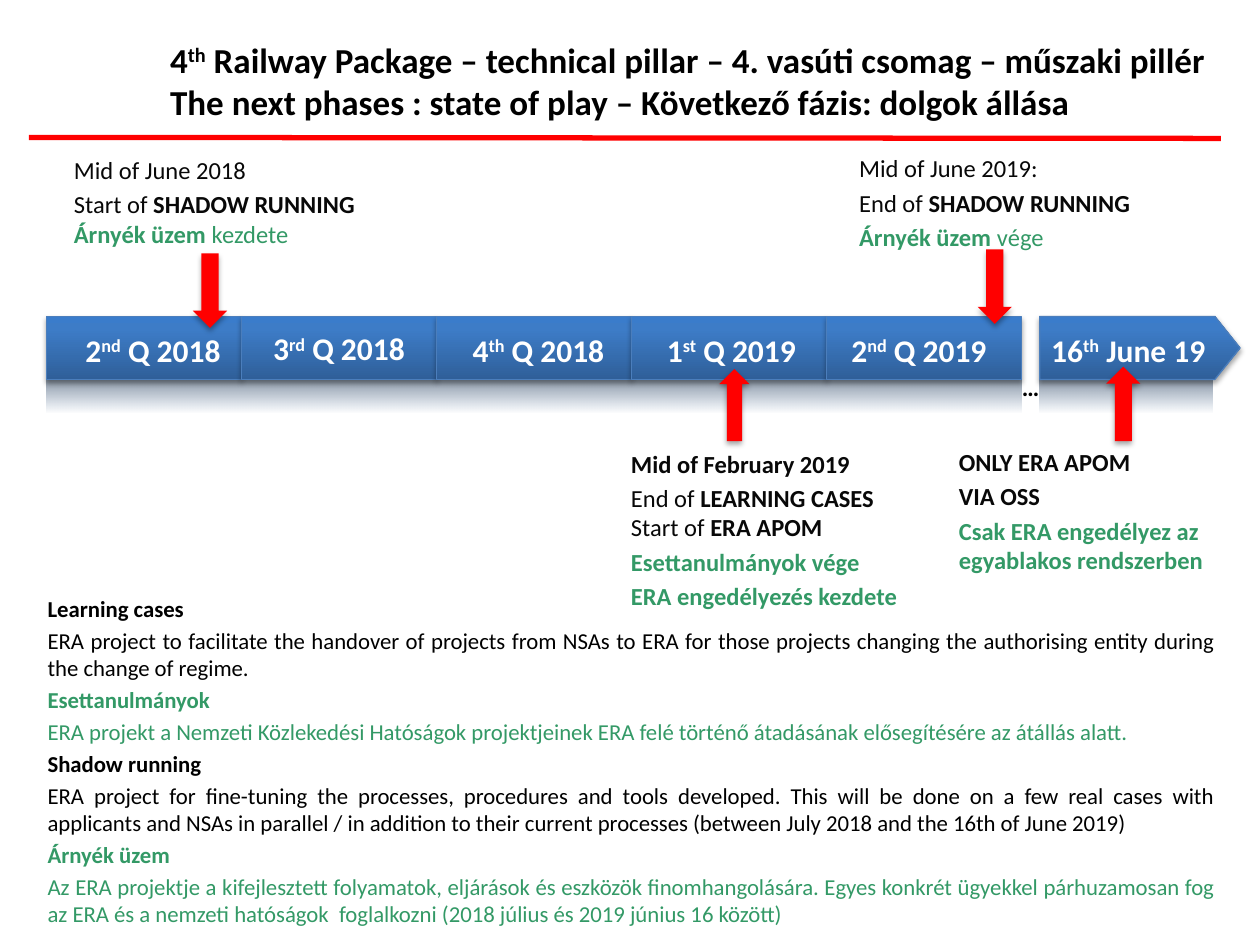
from lxml import etree
from pptx import Presentation
from pptx.dml.color import RGBColor
from pptx.enum.shapes import MSO_CONNECTOR, MSO_SHAPE
from pptx.enum.text import MSO_ANCHOR, MSO_AUTO_SIZE, PP_ALIGN
from pptx.oxml.ns import qn
from pptx.util import Cm, Pt

RECT, PENTAGON, ARROW = MSO_SHAPE.RECTANGLE, MSO_SHAPE.PENTAGON, MSO_SHAPE.DOWN_ARROW
LEFT, CENTER, JUSTIFY = PP_ALIGN.LEFT, PP_ALIGN.CENTER, PP_ALIGN.JUSTIFY
TOP, MIDDLE, BOTTOM = MSO_ANCHOR.TOP, MSO_ANCHOR.MIDDLE, MSO_ANCHOR.BOTTOM

FONT = "Calibri"
BLACK, INK, WHITE, GREEN, RED = "000000", "080808", "FFFFFF", "339966", "FF0000"
TILE_LINE = "4B7EBC"
# Gradient stops: position %, colour, opacity %
TILE_STOPS = [(0, "2F5F99", 100), (80, "3D7CC7", 100), (100, "3A7CCB", 100)]
REFLECTION_STOPS = [(0, "070D13", 100), (100, "1F497D", 0)]

# A run is (text, marks): b = bold, g = green, ^ = superscript
TITLE = [
    [("4", "b"), ("th", "b^"),
     (" Railway Package – technical pillar – 4. vasúti csomag – műszaki pillér", "b")],
    [("The next phases : state of play – Következő fázis: dolgok állása", "b")],
]

# number, ordinal, rest, left of the label (None: written in the tile itself)
QUARTERS = [
    ("2", "nd", " Q 2018", 1.12),
    ("3", "rd", " Q 2018", None),
    ("4", "th", " Q 2018", 8.89),
    ("1", "st", " Q 2019", 12.78),
    ("2", "nd", " Q 2019", 16.56),
]
DEADLINE = ("16", "th", " June 19", 20.78)

# callout box, arrow box, arrow rotation, paragraphs
MILESTONES = [
    ((1.24, 3.0, 6.45, 2.16), (3.89, 5.11, 0.69, 1.5), 0, [
        [("Mid of June 2018", "")],
        [("Start of ", ""), ("SHADOW RUNNING ", "b"), ("Árnyék üzem ", "bg"), ("kezdete", "g")],
    ]),
    ((17.07, 2.97, 7.39, 2.29), (19.71, 5.03, 0.69, 1.5), 0, [
        [("Mid of June 2019:", "")],
        [("End of ", ""), ("SHADOW RUNNING", "b")],
        [("Árnyék üzem ", "bg"), ("vége", "g")],
    ]),
    ((12.47, 8.92, 6.12, 3.61), (14.5, 7.44, 0.61, 1.45), 180, [
        [("Mid of February 2019", "b")],
        [("End of ", ""), ("LEARNING CASES", "b"), (" Start of ", ""), ("ERA APOM", "b")],
        [("Esettanulmányok vége", "bg")],
        [("ERA engedélyezés kezdete", "bg")],
    ]),
    ((19.08, 8.89, 6.12, 2.9), (22.3, 7.39, 0.69, 1.5), 180, [
        [("ONLY ERA APOM", "b")],
        [("VIA OSS", "b")],
        [("Csak ERA engedélyez az egyablakos rendszerben", "bg")],
    ]),
]

DEFINITIONS = [
    [("Learning cases", "b")],
    [("ERA project to facilitate the handover of projects from NSAs to ERA for those projects "
      "changing the authorising entity during the change of regime.", "")],
    [("Esettanulmányok", "bg")],
    [("ERA projekt a Nemzeti Közlekedési Hatóságok projektjeinek ERA felé történő átadásának "
      "elősegítésére az átállás alatt.", "g")],
    [("Shadow running", "b")],
    [("ERA project for fine-tuning the processes, procedures and tools developed. This will be "
      "done on a few real cases with applicants and NSAs in parallel / in addition to their "
      "current processes (between July 2018 and the 16th of June 2019)", "")],
    [("Árnyék üzem", "bg")],
    [("Az ERA projektje a kifejlesztett folyamatok, eljárások és eszközök finomhangolására. "
      "Egyes konkrét ügyekkel párhuzamosan fog az ERA és a nemzeti hatóságok  foglalkozni "
      "(2018 július és 2019 június 16 között)", "g")],
]

TILE_LEFT, TILE_TOP, TILE_WIDTH, TILE_HEIGHT = 0.94, 6.38, 3.93, 1.27
DEADLINE_LEFT, DEADLINE_WIDTH = 20.96, 4.04
REFLECTION_TOP, REFLECTION_HEIGHT = 6.99, 1.32
LABEL_TOP, LABEL_HEIGHT = 6.63, 0.84


def rgb(color):
    return RGBColor.from_string(color)


def add_xml(parent, tag, **attributes):
    return etree.SubElement(parent, qn(tag), {k: str(v) for k, v in attributes.items()})


def add_color(parent, color, opacity):
    add_xml(add_xml(parent, "a:srgbClr", val=color), "a:alpha", val=opacity * 1000)


def fill_gradient(shape, stops, angle):
    shape.fill.gradient()
    gradient = shape._element.spPr.find(qn("a:gradFill"))
    for child in list(gradient):
        gradient.remove(child)
    stop_list = add_xml(gradient, "a:gsLst")
    for position, color, opacity in stops:
        add_color(add_xml(stop_list, "a:gs", pos=position * 1000), color, opacity)
    add_xml(gradient, "a:lin", ang=angle * 60000, scaled=0)


def drop_shadow(shape):
    effects = shape._element.spPr.find(qn("a:effectLst"))
    shadow = add_xml(effects, "a:outerShdw", blurRad=Pt(3.1), dist=Pt(1.8),
                     dir=90 * 60000, rotWithShape=0)
    add_color(shadow, BLACK, 35)


def add_plain_shape(kind, box):
    shape = slide.shapes.add_shape(kind, *map(Cm, box))
    shape.shadow.inherit = False
    shape.line.fill.background()
    return shape


def add_tile(kind, left, width):
    tile = add_plain_shape(kind, (left, TILE_TOP, width, TILE_HEIGHT))
    fill_gradient(tile, TILE_STOPS, 270)
    tile.line.color.rgb = rgb(TILE_LINE)
    tile.line.width = Pt(0.75)
    drop_shadow(tile)
    return tile


def write(frame, paragraphs, size, color, align=LEFT, anchor=TOP, gap=0):
    """Fill a text frame; gap is the space before each later paragraph, as a share of size."""
    frame.word_wrap = True
    frame.vertical_anchor = anchor
    for index, runs in enumerate(paragraphs):
        paragraph = frame.add_paragraph() if index else frame.paragraphs[0]
        paragraph.alignment = align
        paragraph.space_before = Pt(size * gap if index else 0)
        for text, marks in runs:
            run = paragraph.add_run()
            run.text = text
            run.font.name = FONT
            run.font.size = Pt(size)
            run.font.bold = "b" in marks
            run.font.color.rgb = rgb(GREEN if "g" in marks else color)
            if "^" in marks:
                run.font._element.set("baseline", "30000")


def add_text(box, paragraphs, size, color, **layout):
    frame = slide.shapes.add_textbox(*map(Cm, box)).text_frame
    write(frame, paragraphs, size, color, **layout)
    return frame


def write_date(frame, number, ordinal, rest):
    write(frame, [[(number, "b"), (ordinal, "b^"), (rest, "b")]], 18, WHITE,
          align=CENTER, anchor=MIDDLE)


prs = Presentation()
prs.slide_width, prs.slide_height = Cm(25.4), Cm(19.05)
slide = prs.slides.add_slide(prs.slide_layouts[6])

rule = slide.shapes.add_connector(MSO_CONNECTOR.STRAIGHT, Cm(0.58), Cm(2.77), Cm(24.61), Cm(2.79))
rule.line.color.rgb = rgb(RED)
rule.line.width = Pt(3)
add_xml(rule._element.spPr, "a:effectLst")

add_text((3.18, 0, 21.72, 2.59), TITLE, 20, BLACK, anchor=BOTTOM)
add_text((0.71, 11.86, 24, 7.19), DEFINITIONS, 13, BLACK, align=JUSTIFY, gap=0.2)

for left, width in [(DEADLINE_LEFT, 3.48), (TILE_LEFT, len(QUARTERS) * TILE_WIDTH)]:
    reflection = add_plain_shape(RECT, (left, REFLECTION_TOP, width, REFLECTION_HEIGHT))
    fill_gradient(reflection, REFLECTION_STOPS, 90)

deadline_tile = add_tile(PENTAGON, DEADLINE_LEFT, DEADLINE_WIDTH)
deadline_tile.adjustments[0] = 0.4
quarter_tiles = [add_tile(RECT, TILE_LEFT + i * TILE_WIDTH, TILE_WIDTH)
                 for i in range(len(QUARTERS))]

for (*date, label_left), tile in zip(QUARTERS + [DEADLINE], quarter_tiles + [deadline_tile]):
    if label_left is not None:
        label_box = (label_left, LABEL_TOP, TILE_WIDTH, LABEL_HEIGHT)
        tile = slide.shapes.add_textbox(*map(Cm, label_box))
    write_date(tile.text_frame, *date)

for callout_box, arrow_box, rotation, paragraphs in MILESTONES:
    callout = add_text(callout_box, paragraphs, 14, INK, gap=0.2)
    callout.auto_size = MSO_AUTO_SIZE.SHAPE_TO_FIT_TEXT
    arrow = add_plain_shape(ARROW, arrow_box)
    arrow.rotation = rotation
    arrow.fill.solid()
    arrow.fill.fore_color.rgb = rgb(RED)
    drop_shadow(arrow)

ellipsis = add_text((20.35, 7.37, 0.86, 0.86), [[("…", "b")]], 14, BLACK)
ellipsis.word_wrap = False
ellipsis.auto_size = MSO_AUTO_SIZE.SHAPE_TO_FIT_TEXT

prs.save("out.pptx")
